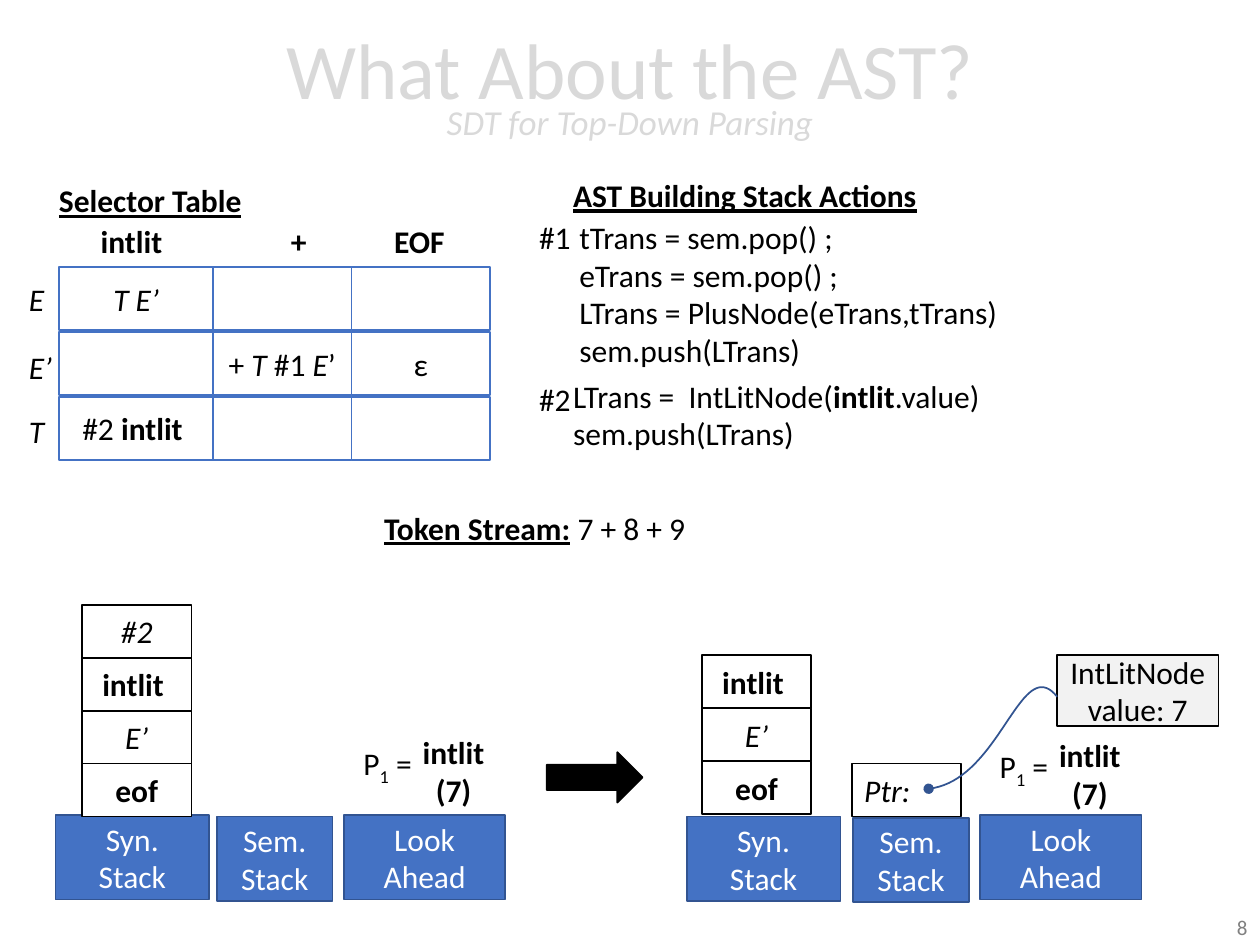
from lxml import etree
from pptx import Presentation, util as u
from pptx.dml.color import RGBColor
from pptx.enum import shapes, text
from pptx.oxml.ns import qn

FONT = "Calibri"
BLACK, WHITE, BLUE, NAVY = "000000", "FFFFFF", "4472C4", "325491"
CENTER, RIGHT = text.PP_ALIGN.CENTER, text.PP_ALIGN.RIGHT
RECT = shapes.MSO_SHAPE.RECTANGLE

# Content: a text is a list of paragraphs, a paragraph a list of (words, style) runs
# Styles: b bold, i italic, u underlined, s subscript
TITLE, SUBTITLE = "What About the AST?", "SDT for Top-Down Parsing"

SELECTOR = [
    [[("T E’", "i")], [], []],
    [[], [("+ ", ""), ("T", "i"), (" #1 ", ""), ("E", "i"), ("’", "")], [("ε", "")]],
    [[("#2 ", ""), ("intlit ", "b")], [], []],
]
GRID_X, GRID_Y, COLUMNS, ROW_H, ROW_STEP = 0.47, 2.12, (1.22, 1.1, 1.1), 0.5, 0.515

LABELS = [  # left, top, width, height, text
    (0.37, 1.39, 1.66, 0.4, [[("Selector Table", "bu")]]),
    (0.7, 1.71, 0.69, 0.4, [[("intlit", "b")]]),
    (2.21, 1.71, 0.33, 0.4, [[("+", "b")]]),
    (3.03, 1.71, 0.61, 0.4, [[("EOF", "b")]]),
    (0.13, 2.17, 0.32, 0.4, [[("E", "i")]]),
    (0.13, 2.71, 0.39, 0.4, [[("E’", "i")]]),
    (0.13, 3.22, 0.32, 0.4, [[("T", "i")]]),
    (4.45, 1.35, 2.95, 0.4, [[("AST Building Stack Actions", "bu")]]),
    (4.18, 1.68, 0.46, 0.4, [[("#1", "")]]),
    (4.5, 1.68, 3.56, 1.31, [
        [("tTrans = sem.pop() ;", "")],
        [("eTrans = sem.pop() ;", "")],
        [("LTrans = PlusNode(eTrans,tTrans)", "")],
        [("sem.push(LTrans)", "")]]),
    (4.18, 2.97, 0.46, 0.4, [[("#2", "")]]),
    (4.45, 2.94, 3.53, 0.71, [
        [("LTrans =  IntLitNode(", ""), ("intlit", "b"), (".value)", "")],
        [("sem.push(LTrans)", "")]]),
    (2.95, 3.99, 2.62, 0.4, [[("Token Stream:", "bu"), (" 7 + 8 + 9", "")]]),
]

# Parser states: symbols from the bottom up, bases as (left, top, width, words)
EOF, E_REST, INTLIT, ACTION = ("eof", "b"), ("E’", "i"), ("intlit ", "b"), ("#2", "i")
STATES = [
    dict(symbols=[EOF, E_REST, INTLIT, ACTION], stack=(0.65, 6.06), look=(2.73, 5.86),
         bases=[(0.44, 6.47, 1.22, "Syn. Stack"), (1.72, 6.48, 0.92, "Sem. Stack"),
                (2.73, 6.47, 1.28, "Look Ahead")]),
    dict(symbols=[EOF, E_REST, INTLIT], stack=(5.57, 6.04), look=(7.78, 5.88),
         bases=[(5.45, 6.48, 1.22, "Syn. Stack"), (6.77, 6.49, 0.92, "Sem. Stack"),
                (7.78, 6.47, 1.28, "Look Ahead")]),
]
SYMBOL_W, SYMBOL_H, BASE_H = 0.87, 0.42, 0.67
POINTER = [(7.37, 6.26), (7.94, 6.2), (8.1, 5.17), (8.39, 5.53)]  # Bezier controls


def rgb(value):
    return RGBColor.from_string(value)


def inches(*values):
    return [u.Inches(v) for v in values]


def style(r, marks="", size=18, color=BLACK):
    formats = dict(name=FONT, size=u.Pt(size), bold="b" in marks,
                   italic="i" in marks, underline="u" in marks)
    for key, value in formats.items():
        setattr(r.font, key, value)
    r.font.color.rgb = rgb(color)
    if "s" in marks:
        r._r.get_or_add_rPr().set("baseline", "-25000")


def write(tf, paragraphs, align=None, size=18, color=BLACK):
    for n, runs in enumerate(paragraphs):
        p = tf.add_paragraph() if n else tf.paragraphs[0]
        p.alignment = align
        for words, marks in runs:
            r = p.add_run()
            r.text = words
            style(r, marks, size, color)


def outline(sp, color):
    sp.shadow.inherit = False
    sp.line.color.rgb = rgb(color)
    sp.line.width = u.Pt(1)


def box(s, x, y, w, h, paragraphs=(), fill=WHITE, line=BLACK, color=BLACK,
        align=CENTER, kind=RECT):
    sp = s.shapes.add_shape(kind, *inches(x, y, w, h))
    sp.fill.solid()
    sp.fill.fore_color.rgb = rgb(fill)
    outline(sp, line)
    sp.text_frame.vertical_anchor = text.MSO_ANCHOR.MIDDLE
    write(sp.text_frame, paragraphs, align, color=color)


def label(s, x, y, w, h, paragraphs, wrap=False, **kw):
    tf = s.shapes.add_textbox(*inches(x, y, w, h)).text_frame
    tf.word_wrap = wrap
    tf.auto_size = text.MSO_AUTO_SIZE.SHAPE_TO_FIT_TEXT
    write(tf, paragraphs, **kw)


def add_title(s):
    sp = s.shapes.title
    sp.left, sp.top, sp.width, sp.height = inches(0, 0.02, 10, 1.45)
    tf = sp.text_frame
    tf.auto_size = text.MSO_AUTO_SIZE.NONE
    tf.vertical_anchor = text.MSO_ANCHOR.MIDDLE
    p = tf.paragraphs[0]
    p.alignment, p.line_spacing = CENTER, 0.7
    for words, marks, size in ((TITLE, "", 45), (SUBTITLE, "i", 20)):
        if p.runs:
            p.add_line_break()
        r = p.add_run()
        r.text = words
        style(r, marks, size, "D9D9D9")


def add_selector(s):
    for row, cells in enumerate(SELECTOR):
        for col, runs in enumerate(cells):
            box(s, GRID_X + sum(COLUMNS[:col]), GRID_Y + row * ROW_STEP,
                COLUMNS[col], ROW_H, [runs], line=BLUE)


def add_state(s, state):
    for x, y, w, words in state["bases"]:
        box(s, x, y, w, BASE_H, [[(word, "")] for word in words.split()],
            BLUE, NAVY, WHITE)
    x, y = state["stack"]
    for level, symbol in enumerate(state["symbols"]):
        box(s, x, y - level * SYMBOL_H, SYMBOL_W, SYMBOL_H, [[symbol]])
    x, y = state["look"]
    label(s, x, y, 0.66, 0.4, [[(" P", ""), ("1", "s"), (" =", "")]])
    label(s, x + 0.49, y - 0.09, 0.76, 0.71, [[("intlit", "b")], [("(7)", "b")]],
          wrap=True, align=CENTER)


def add_pointer(s, steps=40):
    def at(t):
        weights = ((1 - t) ** 3, 3 * t * (1 - t) ** 2, 3 * t * t * (1 - t), t ** 3)
        return tuple(u.Inches(sum(k * c[axis] for k, c in zip(weights, POINTER)))
                     for axis in (0, 1))

    curve = s.shapes.build_freeform(*at(0))
    curve.add_line_segments([at(n / steps) for n in range(1, steps + 1)], close=False)
    sp = curve.convert_to_shape()
    sp.fill.background()
    outline(sp, NAVY)
    etree.SubElement(sp.line._get_or_add_ln(), qn("a:headEnd"), type="oval")


def main():
    prs = Presentation()
    prs.slide_width, prs.slide_height = inches(10, 7.5)
    s = prs.slides.add_slide(prs.slide_layouts[5])
    add_title(s)

    # Selector table and stack actions
    add_selector(s)
    for item in LABELS:
        label(s, *item)

    # Parser before and after the step
    for state in STATES:
        add_state(s, state)
    box(s, 4.34, 5.97, 0.76, 0.4, fill=BLACK, kind=shapes.MSO_SHAPE.RIGHT_ARROW)

    # Semantic stack entry and its node
    box(s, 8.39, 5.2, 1.28, 0.56, [[("IntLitNode", "")], [("value: 7", "")]], "F2F2F2")
    box(s, 6.76, 6.06, SYMBOL_W, SYMBOL_H, [[("Ptr:", "i")]], align=text.PP_ALIGN.LEFT)
    add_pointer(s)

    # Slide number
    label(s, 7.75, 7.21, 2.25, 0.28, [[("8", "")]], wrap=True, align=RIGHT,
          size=12, color="808080")
    prs.save("out.pptx")


if __name__ == "__main__":
    main()
